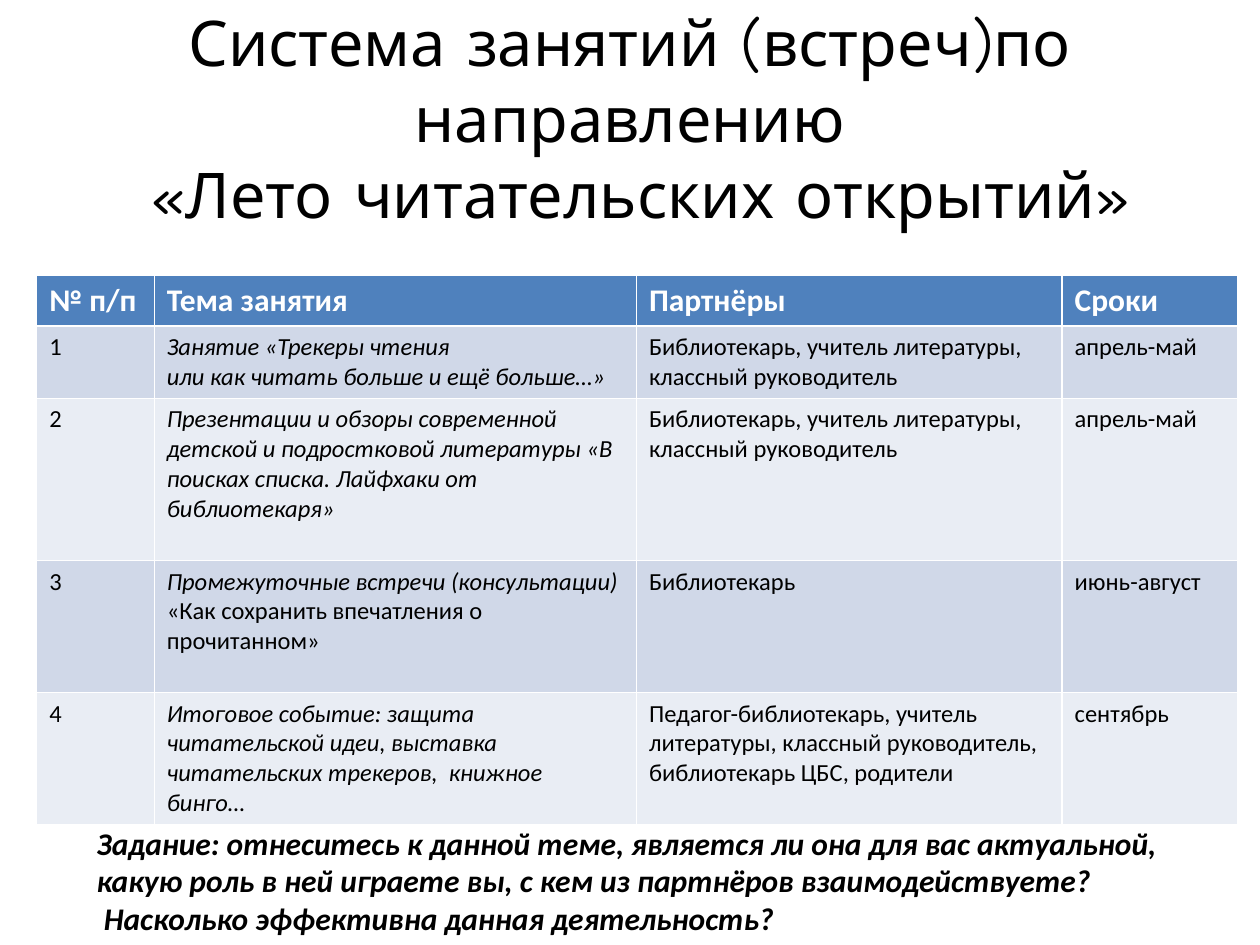
from dataclasses import dataclass

from pptx import Presentation
from pptx.dml.color import RGBColor
from pptx.enum import text as t
from pptx.util import Cm, Pt


@dataclass(frozen=True)
class Theme:
    ink: RGBColor = RGBColor(0, 0, 0)
    paper: RGBColor = RGBColor(255, 255, 255)
    header: RGBColor = RGBColor(0x4F, 0x81, 0xBD)
    bands: tuple = (RGBColor(0xD0, 0xD8, 0xE8), RGBColor(0xE9, 0xED, 0xF4))
    title_font: str = "Comic Neue"
    body_font: str = "Calibri"
    title_size: int = 36
    large_size: int = 18
    body_size: int = 14


@dataclass(frozen=True)
class Session:
    topic: str
    partners: str
    dates: str
    height: float  # cm


THEME = Theme()
HEADINGS = ("№ п/п", "Тема занятия", "Партнёры", "Сроки")
COLUMN_WIDTHS = (2.37, 9.72, 8.58, 3.54)
HEADER_HEIGHT = 1.03
TOPIC_COLUMN = 1
CLASS_TEAM = "Библиотекарь, учитель литературы, классный руководитель"

# \v is a line break, \n starts a new paragraph
SESSIONS = (
    Session("Занятие «Трекеры чтения \vили как читать больше и ещё больше…»",
            CLASS_TEAM, "апрель-май", 1.46),
    Session("Презентации и обзоры современной детской и подростковой литературы "
            "«В поисках списка. Лайфхаки от библиотекаря»",
            CLASS_TEAM, "апрель-май", 3.27),
    Session("Промежуточные встречи (консультации)\n"
            "«Как сохранить впечатления о прочитанном»",
            "Библиотекарь", "июнь-август", 2.66),
    Session("Итоговое событие: защита читательской идеи, выставка "
            "читательских трекеров,  книжное бинго…",
            "Педагог-библиотекарь, учитель литературы, классный руководитель, "
            "библиотекарь ЦБС, родители", "сентябрь", 2.64),
)
TASK = ("Задание: отнеситесь к данной теме, является ли она для вас актуальной,\n"
        "какую роль в ней играете вы, с кем из партнёров взаимодействуете?\n"
        " Насколько эффективна данная деятельность?")


def style_text(frame, size: int, color: RGBColor, font: str = THEME.body_font,
               bold: bool = False, italic: bool = False) -> None:
    for para in frame.paragraphs:
        for span in para.runs:
            span.font.name = font
            span.font.size = Pt(size)
            span.font.color.rgb = color
            span.font.bold = bold
            span.font.italic = italic


def place(shape, left: float, top: float, width: float, height: float) -> None:
    shape.left, shape.top = Cm(left), Cm(top)
    shape.width, shape.height = Cm(width), Cm(height)


def fill_cell(cell, content: str, color: RGBColor) -> None:
    cell.text_frame.text = content
    cell.fill.solid()
    cell.fill.fore_color.rgb = color


def add_title(page) -> None:
    title = page.shapes.title
    place(title, 0, 0.08, 25.4, 3.18)
    frame = title.text_frame
    frame.text = "Система занятий (встреч)по направлению\v «Лето читательских открытий»"
    frame.auto_size = t.MSO_AUTO_SIZE.NONE
    frame.vertical_anchor = t.MSO_ANCHOR.TOP
    frame.margin_top = 0
    frame.paragraphs[0].alignment = t.PP_ALIGN.CENTER
    style_text(frame, THEME.title_size, THEME.ink, THEME.title_font)


def add_schedule(page) -> None:
    heights = (HEADER_HEIGHT, *(session.height for session in SESSIONS))
    table = page.shapes.add_table(
        len(heights), len(HEADINGS), Cm(0.74), Cm(5.54),
        Cm(sum(COLUMN_WIDTHS)), Cm(sum(heights))).table
    for column, width in zip(table.columns, COLUMN_WIDTHS):
        column.width = Cm(width)
    for row, height in zip(table.rows, heights):
        row.height = Cm(height)

    # Header row
    for cell, heading in zip(table.rows[0].cells, HEADINGS):
        fill_cell(cell, heading, THEME.header)
        style_text(cell.text_frame, THEME.large_size, THEME.paper, bold=True)

    # Numbered sessions on alternating bands
    for number, session in enumerate(SESSIONS, start=1):
        band = THEME.bands[(number - 1) % len(THEME.bands)]
        contents = (str(number), session.topic, session.partners, session.dates)
        for index, content in enumerate(contents):
            cell = table.cell(number, index)
            fill_cell(cell, content, band)
            style_text(cell.text_frame, THEME.body_size, THEME.ink)
            if index == TOPIC_COLUMN:
                for span in cell.text_frame.paragraphs[0].runs:
                    span.font.italic = True


def add_task(page) -> None:
    box = page.shapes.add_textbox(Cm(1.7), Cm(16.48), Cm(22.3), Cm(2.57))
    frame = box.text_frame
    frame.text = TASK
    frame.word_wrap = False
    frame.auto_size = t.MSO_AUTO_SIZE.SHAPE_TO_FIT_TEXT
    style_text(frame, THEME.large_size, THEME.ink, bold=True, italic=True)


def main() -> None:
    deck = Presentation()
    deck.slide_width, deck.slide_height = Cm(25.4), Cm(19.05)
    page = deck.slides.add_slide(deck.slide_layouts[5])  # Title Only
    add_title(page)
    add_schedule(page)
    add_task(page)
    deck.save("out.pptx")


if __name__ == "__main__":
    main()
